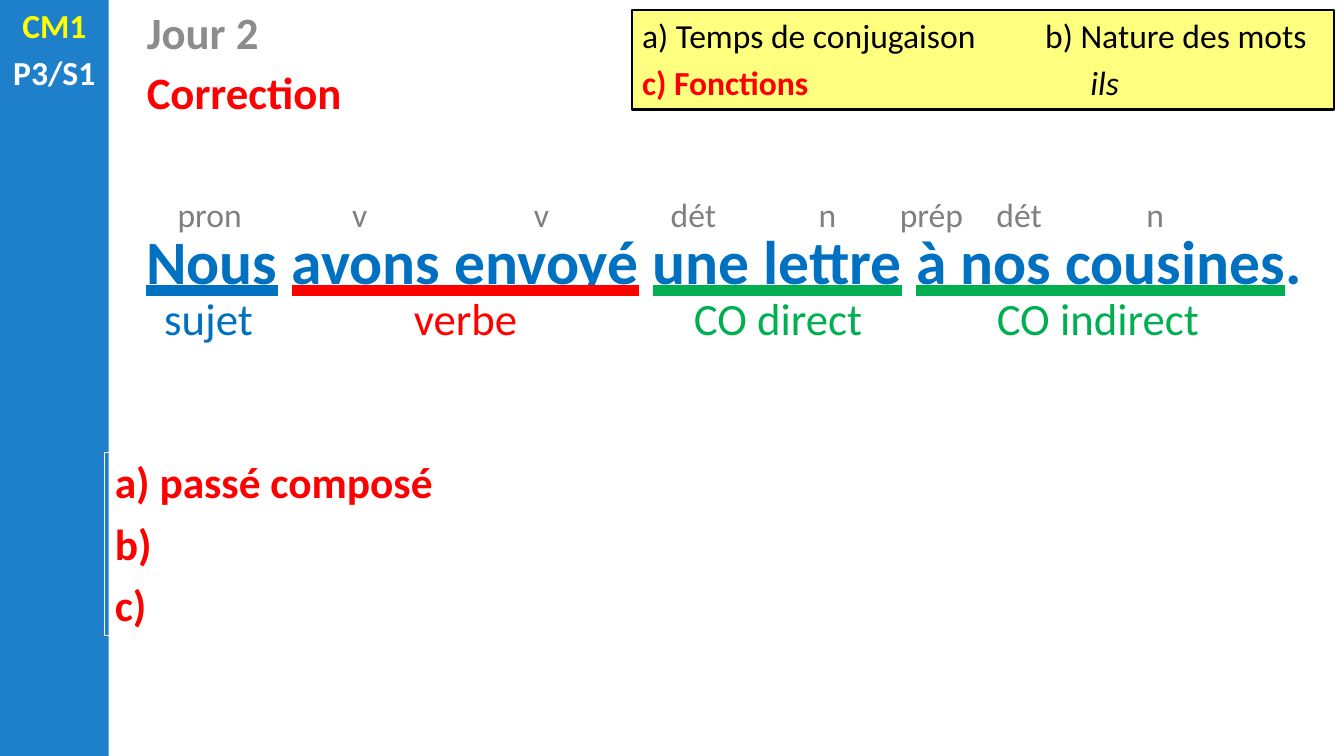
"""Builds the French grammar correction slide for CM1, day 2."""
import pptx
import pptx.dml.color
import pptx.enum.shapes
import pptx.enum.text
import pptx.oxml
import pptx.oxml.ns
import pptx.util
from pptx.util import Cm

BLUE, RED, GREEN, GREY = "0070C0", "FF0000", "00B050", "808080"
NS = pptx.oxml.ns.nsdecls("a")
CENTER = pptx.enum.text.PP_ALIGN.CENTER
LEFT = pptx.enum.text.PP_ALIGN.LEFT


def rgb(value):
    return pptx.dml.color.RGBColor.from_string(value)


def write(left, top, width, height, lines, size, bold=False, align=CENTER):
    frame = slide.shapes.add_textbox(Cm(left), Cm(top), Cm(width), Cm(height)).text_frame
    frame.word_wrap = True
    for number, (text, color) in enumerate(lines):
        paragraph = frame.add_paragraph() if number else frame.paragraphs[0]
        paragraph.text = text
        paragraph.alignment = align
        paragraph.space_before = pptx.util.Pt(size * 0.2)
        paragraph.font.name = "Calibri"
        paragraph.font.size = pptx.util.Pt(size)
        paragraph.font.bold = bold
        paragraph.font.color.rgb = rgb(color)
    return frame


deck = pptx.Presentation()
deck.slide_width, deck.slide_height = Cm(33.87), Cm(19.05)
slide = deck.slides.add_slide(deck.slide_layouts[6])

sidebar = slide.shapes.add_shape(
    pptx.enum.shapes.MSO_SHAPE.RECTANGLE, 0, 0, Cm(2.74), deck.slide_height)
sidebar.shadow.inherit = False
sidebar.fill.solid()
sidebar.fill.fore_color.rgb = rgb("1E7FCB")
sidebar.line.fill.background()
write(0, 0, 2.74, 2.51, [("CM1", "FFFF00"), ("P3/S1", "FFFFFF")], 24, True)

write(3.45, 0, 20.09, 1.63, [("Jour 2", "8C8C8C")], 32, True, LEFT)
write(3.45, 1.5, 12.27, 1.63, [("Correction", RED)], 32, True, LEFT)

sentence = write(2.64, 5.49, 31.22, 2.13, [("", BLUE)], 44, True).paragraphs[0]
for group, underline in [("Nous", BLUE), (" ", None), ("avons envoyé", RED), (" ", None),
                         ("une lettre", GREEN), (" ", None), ("à nos cousines", GREEN),
                         (".", None)]:
    run = sentence.add_run()
    run.text = group
    if underline:
        run.font.underline = pptx.enum.text.MSO_UNDERLINE.HEAVY_LINE
        run.font.color.rgb = rgb(BLUE)
        run.font.fill._xPr.append(pptx.oxml.parse_xml(
            f'<a:uFill {NS}><a:solidFill><a:srgbClr val="{underline}"/></a:solidFill></a:uFill>'))

tasks = slide.shapes.add_shape(
    pptx.enum.shapes.MSO_SHAPE.RECTANGLE, Cm(15.93), Cm(0.25), Cm(17.7), Cm(2.51))
tasks.shadow.inherit = False
tasks.fill.solid()
tasks.fill.fore_color.rgb = rgb("FFFF00")
tasks.fill._xPr.find(".//" + pptx.oxml.ns.qn("a:srgbClr")).append(
    pptx.oxml.parse_xml(f'<a:alpha {NS} val="50000"/>'))
tasks.line.color.rgb = rgb("000000")
tasks.line.width = pptx.util.Pt(1.5)
tasks.text_frame.word_wrap = True
tasks.text_frame.vertical_anchor = pptx.enum.text.MSO_ANCHOR.TOP
for number, (tab, runs) in enumerate([
        (10.16, [("a) Temps de conjugaison\tb) Nature des mots", "000000", False, False)]),
        (11.3, [("c) Fonctions\t", RED, True, False), ("ils", "000000", False, True)])]):
    task = tasks.text_frame.add_paragraph() if number else tasks.text_frame.paragraphs[0]
    task.alignment = LEFT
    task.space_before = pptx.util.Pt(4.8)
    task.font.name = "Calibri"
    task.font.size = pptx.util.Pt(24)
    task._p.pPr.insert_element_before(pptx.oxml.parse_xml(
        f'<a:tabLst {NS}><a:tab pos="{Cm(tab)}" algn="l"/></a:tabLst>'), "a:defRPr")
    for text, color, bold, italic in runs:
        run = task.add_run()
        run.text = text
        run.font.bold, run.font.italic = bold, italic
        run.font.color.rgb = rgb(color)

for nature, left in [("pron", 4.14), ("v", 7.92), ("v", 12.5), ("dét", 16.33), ("n", 19.71),
                     ("prép", 22.33), ("dét", 24.54), ("n", 27.97)]:
    write(left, 4.75, 2.29, 1.27, [(nature, GREY)], 24)

for function, left, width, color in [("sujet", 3.68, 3.15, BLUE), ("verbe", 10.16, 3.15, RED),
                                     ("CO direct", 16.84, 5.54, GREEN),
                                     ("CO indirect", 24.66, 6.02, GREEN)]:
    write(left, 7.21, width, 1.63, [(function, color)], 32)

answers = slide.shapes.add_table(1, 1, Cm(2.64), Cm(11.4), Cm(31.22), Cm(4.62)).table.cell(0, 0)
answers.fill.background()
answers.text = "a) passé composé\nb)\nc)"
for answer in answers.text_frame.paragraphs:
    answer.space_after = pptx.util.Pt(6)
    answer.font.name = "Calibri"
    answer.font.size = pptx.util.Pt(31)
    answer.font.bold = True
    answer.font.color.rgb = rgb(RED)

deck.save("out.pptx")
